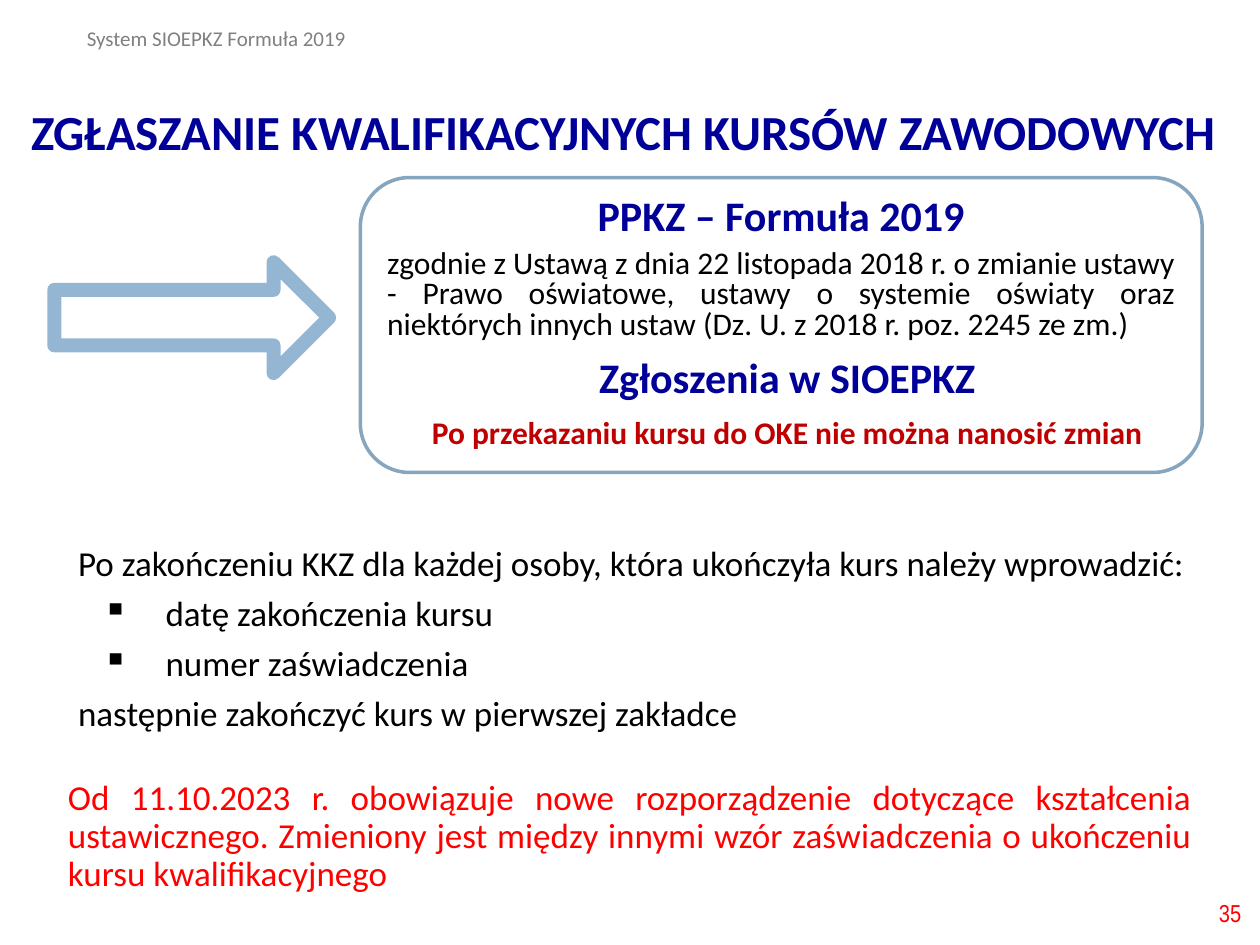
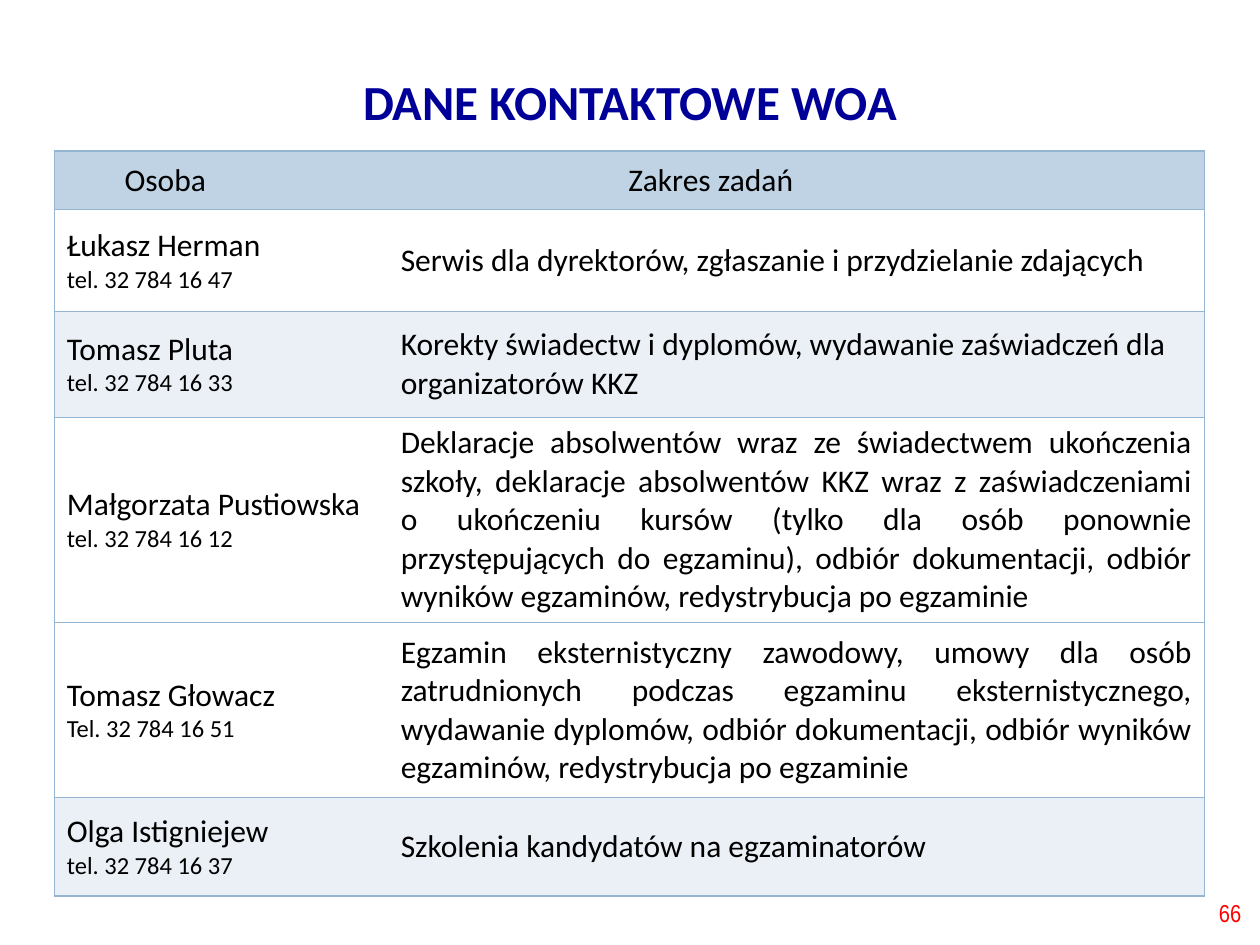
from lxml import etree
from pptx import Presentation
from pptx.dml.color import RGBColor
from pptx.enum.shapes import MSO_SHAPE
from pptx.enum.text import MSO_ANCHOR, MSO_AUTO_SIZE, PP_ALIGN
from pptx.oxml.ns import qn
from pptx.util import Pt

LEFT, MID, RIGHT, JUST = PP_ALIGN.LEFT, PP_ALIGN.CENTER, PP_ALIGN.RIGHT, PP_ALIGN.JUSTIFY
TOP, CENTRE = MSO_ANCHOR.TOP, MSO_ANCHOR.MIDDLE
FIXED = MSO_AUTO_SIZE.NONE
ROUND, ARROW = MSO_SHAPE.ROUNDED_RECTANGLE, MSO_SHAPE.RIGHT_ARROW

HUES = {
    "navy": "000099", "black": "000000", "red": "FF0000", "wine": "C00000",
    "grey": "808080", "frame": "86A5BE", "blue": "94B6D2",
    "head": "BFD3E4", "band": "EAF0F6", "white": "FFFFFF",
}

COURSE = {
    "title": "ZGŁASZANIE KWALIFIKACYJNYCH KURSÓW ZAWODOWYCH",
    "page": "35",
    "label": "System SIOEPKZ Formuła 2019",
}
PANEL = [
    ("PPKZ – Formuła 2019",
     dict(size=24, hue="navy", bold=True, align=MID, lead=0.8)),
    ("zgodnie z Ustawą z dnia 22 listopada 2018 r. o zmianie ustawy - Prawo "
     "oświatowe, ustawy o systemie oświaty oraz niektórych innych ustaw "
     "(Dz. U. z 2018 r. poz. 2245 ze zm.)",
     dict(size=18, align=JUST, lead=0.8, before=6)),
    ("Zgłoszenia w SIOEPKZ",
     dict(size=24, hue="navy", bold=True, align=MID, before=6, indent=7)),
    ("Po przekazaniu kursu do OKE nie można nanosić zmian",
     dict(size=18, hue="wine", bold=True, align=MID, before=6, indent=7)),
]
BODY = dict(size=20, lead=0.9, after=7)
ITEM = dict(BODY, indent=50, hang=-36, mark="▪")
STEPS = [
    ("Po zakończeniu KKZ dla każdej osoby, która ukończyła kurs należy wprowadzić:", BODY),
    ("datę zakończenia kursu", ITEM),
    ("numer zaświadczenia", ITEM),
    ("następnie zakończyć kurs w pierwszej zakładce", BODY),
]
NOTICE = [
    ("Od 11.10.2023 r. obowiązuje nowe rozporządzenie dotyczące kształcenia "
     "ustawicznego. Zmieniony jest między innymi wzór zaświadczenia o ukończeniu "
     "kursu kwalifikacyjnego", dict(BODY, hue="red", align=JUST)),
]

STAFF = {"title": "DANE KONTAKTOWE WOA", "page": "66"}
HEADS = [("Osoba", 33), ("Zakres zadań", 130)]
PEOPLE = [
    ("Łukasz Herman", "tel. 32 784 16 47", LEFT, "white",
     "Serwis dla dyrektorów, zgłaszanie i przydzielanie zdających"),
    ("Tomasz Pluta", "tel. 32 784 16 33", LEFT, "band",
     "Korekty świadectw i dyplomów, wydawanie zaświadczeń dla organizatorów KKZ"),
    ("Małgorzata Pustiowska", "tel. 32 784 16 12", JUST, "white",
     "Deklaracje absolwentów wraz ze świadectwem ukończenia szkoły, deklaracje "
     "absolwentów KKZ wraz z zaświadczeniami\no ukończeniu kursów (tylko dla osób "
     "ponownie przystępujących do egzaminu), odbiór dokumentacji, odbiór wyników "
     "egzaminów, redystrybucja po egzaminie"),
    ("Tomasz Głowacz", "Tel. 32 784 16 51", JUST, "white",
     "Egzamin eksternistyczny zawodowy, umowy dla osób zatrudnionych podczas "
     "egzaminu eksternistycznego, wydawanie dyplomów, odbiór dokumentacji, odbiór "
     "wyników egzaminów, redystrybucja po egzaminie"),
    ("Olga Istigniejew", "tel. 32 784 16 37", LEFT, "band",
     "Szkolenia kandydatów na egzaminatorów"),
]
COLS = [190.8, 466.5]
ROWS = [33.3, 58.3, 60.5, 117.4, 100, 56.2]
NO_STYLE = "{2D5ABB26-0587-4C30-8999-92F81FD0307C}"


def color(name):
    return RGBColor.from_string(HUES[name])


def write(para, text, size=18, hue="black", font="Calibri", bold=False, align=LEFT,
          lead=1, before=0, after=0, indent=0, hang=0, mark=None):
    para.text = text
    para.alignment, para.line_spacing = align, lead
    para.space_before, para.space_after = Pt(before), Pt(after)
    props = para._p.get_or_add_pPr()
    props.set("marL", str(Pt(indent)))
    props.set("indent", str(Pt(hang)))
    if mark:
        etree.SubElement(props, qn("a:buChar")).set("char", mark)
    for run in para.runs:
        face = run.font
        face.name, face.size, face.bold = font, Pt(size), bold
        face.color.rgb = color(hue)


def fill(frame, parts, anchor=CENTRE, inset=None):
    frame.word_wrap, frame.auto_size = True, FIXED
    frame.vertical_anchor = anchor
    if inset is not None:
        frame.margin_left = frame.margin_right = Pt(inset)
        frame.margin_top = frame.margin_bottom = Pt(inset)
    for i, (text, look) in enumerate(parts):
        para = frame.add_paragraph() if i else frame.paragraphs[0]
        write(para, text, **look)


def note(slide, area, parts, **look):
    box = slide.shapes.add_textbox(*map(Pt, area))
    fill(box.text_frame, parts, **look)


def outline(slide, kind, area, hue, width):
    shape = slide.shapes.add_shape(kind, *map(Pt, area))
    shape.shadow.inherit = False
    shape.fill.background()
    shape.line.color.rgb = color(hue)
    shape.line.width = Pt(width)
    return shape


def start(deck, data, top, width, lead):
    slide = deck.slides.add_slide(deck.slide_layouts[5])
    title = slide.shapes.title
    title.left, title.top = Pt(0), Pt(top)
    title.width, title.height = Pt(width), Pt(36)
    look = dict(size=28, hue="navy", bold=True, align=MID, lead=lead)
    fill(title.text_frame, [(data["title"], look)])
    look = dict(size=14, hue="red", font="Arial Narrow", align=RIGHT)
    note(slide, (554.4, 507, 162, 28.8), [(data["page"], look)])
    return slide


def edge(cell, sides):
    props = cell._tc.get_or_add_tcPr()
    for i, side in enumerate(sides):
        line = etree.Element(qn("a:ln" + side), w=str(Pt(1)))
        paint = etree.SubElement(line, qn("a:solidFill"))
        etree.SubElement(paint, qn("a:srgbClr")).set("val", HUES["blue"])
        props.insert(i, line)


def course(deck):
    slide = start(deck, COURSE, 57, 712, 1)
    panel = outline(slide, ROUND, (205.9, 101.5, 481, 168.5), "frame", 2)
    fill(panel.text_frame, PANEL)
    arrow = outline(slide, ARROW, (31, 149.8, 157, 63.4), "blue", 8)
    etree.SubElement(arrow.line._get_or_add_ln(), qn("a:round"))
    label = (COURSE["label"], dict(size=12, hue="grey"))
    note(slide, (42.5, 10.8, 192, 21.6), [label], anchor=TOP)
    note(slide, (36, 305.3, 659.5, 121), STEPS, inset=8.64)
    note(slide, (30.2, 438.5, 659.5, 80), NOTICE, inset=8.64)


def staff(deck):
    slide = start(deck, STAFF, 41.8, 720, 0.9)
    area = (31, 86.4, sum(COLS), sum(ROWS))
    table = slide.shapes.add_table(len(ROWS), len(COLS), *map(Pt, area)).table
    table._tbl.tblPr.find(qn("a:tableStyleId")).text = NO_STYLE
    for col, width in zip(table.columns, COLS):
        col.width = Pt(width)
    for row, height in zip(table.rows, ROWS):
        row.height = Pt(height)
    grid = [("head", [[(text, dict(indent=gap))] for text, gap in HEADS])]
    for name, phone, align, hue, task in PEOPLE:
        grid.append((hue, [[(name, {}), (phone, dict(size=14))],
                           [(task, dict(align=align))]]))
    for r, (hue, cells) in enumerate(grid):
        for c, parts in enumerate(cells):
            cell = table.cell(r, c)
            cell.vertical_anchor = CENTRE
            cell.fill.solid()
            cell.fill.fore_color.rgb = color(hue)
            edge(cell, "RTB" if c else "LTB")
            frame = cell.text_frame
            for i, (text, look) in enumerate(parts):
                write(frame.add_paragraph() if i else frame.paragraphs[0], text, **look)


def main():
    deck = Presentation()
    deck.slide_width, deck.slide_height = Pt(720), Pt(540)
    course(deck)
    staff(deck)
    deck.save("out.pptx")


if __name__ == "__main__":
    main()
